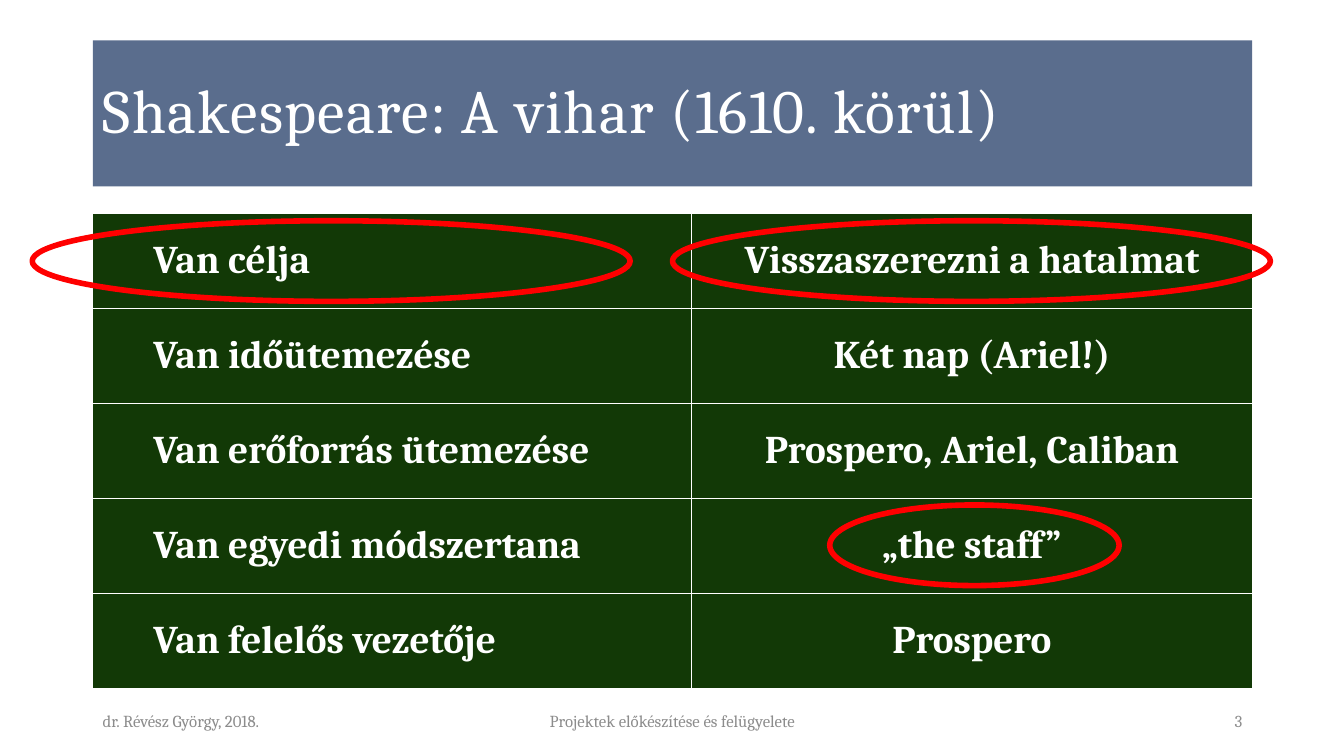
from dataclasses import dataclass

from pptx import Presentation
from pptx import util as u
from pptx.dml.color import RGBColor
from pptx.enum import shapes, text
from pptx.oxml import parse_xml
from pptx.oxml.ns import nsdecls

Inches = u.Inches
Align = text.PP_ALIGN


@dataclass(frozen=True)
class Theme:
    font: str = "Cambria"
    white: str = "FFFFFF"
    blue: str = "5A6D8D"
    green: str = "123906"
    red: str = "FF0000"
    gray: str = "8C8C8C"
    title: int = 44
    body: int = 28
    small: int = 12


theme = Theme()


def write(frame, words, size, color, align=Align.LEFT, bold=False):
    """Fill a text frame with one formatted paragraph and return it."""
    para = frame.paragraphs[0]
    para.alignment = align
    run = para.add_run()
    run.text = words
    run.font.name = theme.font
    run.font.size = u.Pt(size)
    run.font.bold = bold
    run.font.color.rgb = RGBColor.from_string(color)
    return para


def edge(cell):
    """Give a cell thin white borders on all sides."""
    props = cell._tc.get_or_add_tcPr()
    for i, side in enumerate(("lnL", "lnR", "lnT", "lnB")):
        props.insert(i, parse_xml(
            f'<a:{side} {nsdecls("a")} w="12700"><a:solidFill>'
            f'<a:srgbClr val="{theme.white}"/></a:solidFill></a:{side}>'))


deck = Presentation()
deck.slide_width, deck.slide_height = Inches(13.33), Inches(7.5)
slide = deck.slides.add_slide(deck.slide_layouts[5])
left, width = 0.92, 11.5

# Title band
title = slide.shapes.title
title.left, title.top = Inches(left), Inches(0.4)
title.width, title.height = Inches(width), Inches(1.45)
title.fill.solid()
title.fill.fore_color.rgb = RGBColor.from_string(theme.blue)
frame = title.text_frame
frame.auto_size = text.MSO_AUTO_SIZE.NONE
frame.vertical_anchor = text.MSO_ANCHOR.MIDDLE
para = write(frame, "Shakespeare: A vihar (1610. körül)", theme.title, theme.white)
para.line_spacing = 0.9
para.runs[0]._r.get_or_add_rPr().set("spc", "100")

# Table of project traits
rows = [
    ("Van célja", "Visszaszerezni a hatalmat"),
    ("Van időütemezése", "Két nap (Ariel!)"),
    ("Van erőforrás ütemezése", "Prospero, Ariel, Caliban"),
    ("Van egyedi módszertana", "„the staff”"),
    ("Van felelős vezetője", "Prospero"),
]
table = slide.shapes.add_table(
    len(rows), 2, Inches(left), Inches(2.12), Inches(width), Inches(4.71)).table
table.columns[0].width, table.columns[1].width = Inches(5.94), Inches(5.56)
for r, row in enumerate(rows):
    for c, words in enumerate(row):
        cell = table.cell(r, c)
        cell.fill.solid()
        cell.fill.fore_color.rgb = RGBColor.from_string(theme.green)
        cell.vertical_anchor = text.MSO_ANCHOR.MIDDLE
        para = write(cell.text_frame, words, theme.body, theme.white,
                     align=Align.CENTER if c else Align.LEFT, bold=True)
        if c == 0:
            para.level = 1
            para._p.get_or_add_pPr().set("marL", str(Inches(0.5)))
        edge(cell)

# Red rings around the key cells
for x, y, w in ((0.32, 2.19, 5.93), (6.67, 2.19, 5.93), (8.23, 5.01, 2.87)):
    ring = slide.shapes.add_shape(
        shapes.MSO_SHAPE.OVAL, Inches(x), Inches(y), Inches(w), Inches(0.8))
    ring.shadow.inherit = False
    ring.fill.background()
    ring.line.color.rgb = RGBColor.from_string(theme.red)
    ring.line.width = u.Pt(4)

# Footer line
for x, w, words, align in (
    (left, 3, "dr. Révész György, 2018.", Align.LEFT),
    (4.42, 4.5, "Projektek előkészítése és felügyelete", Align.CENTER),
    (9.42, 3, "3", Align.RIGHT),
):
    box = slide.shapes.add_textbox(Inches(x), Inches(6.95), Inches(w), Inches(0.4))
    box.text_frame.word_wrap = True
    box.text_frame.vertical_anchor = text.MSO_ANCHOR.MIDDLE
    write(box.text_frame, words, theme.small, theme.gray, align=align)

deck.save("out.pptx")
